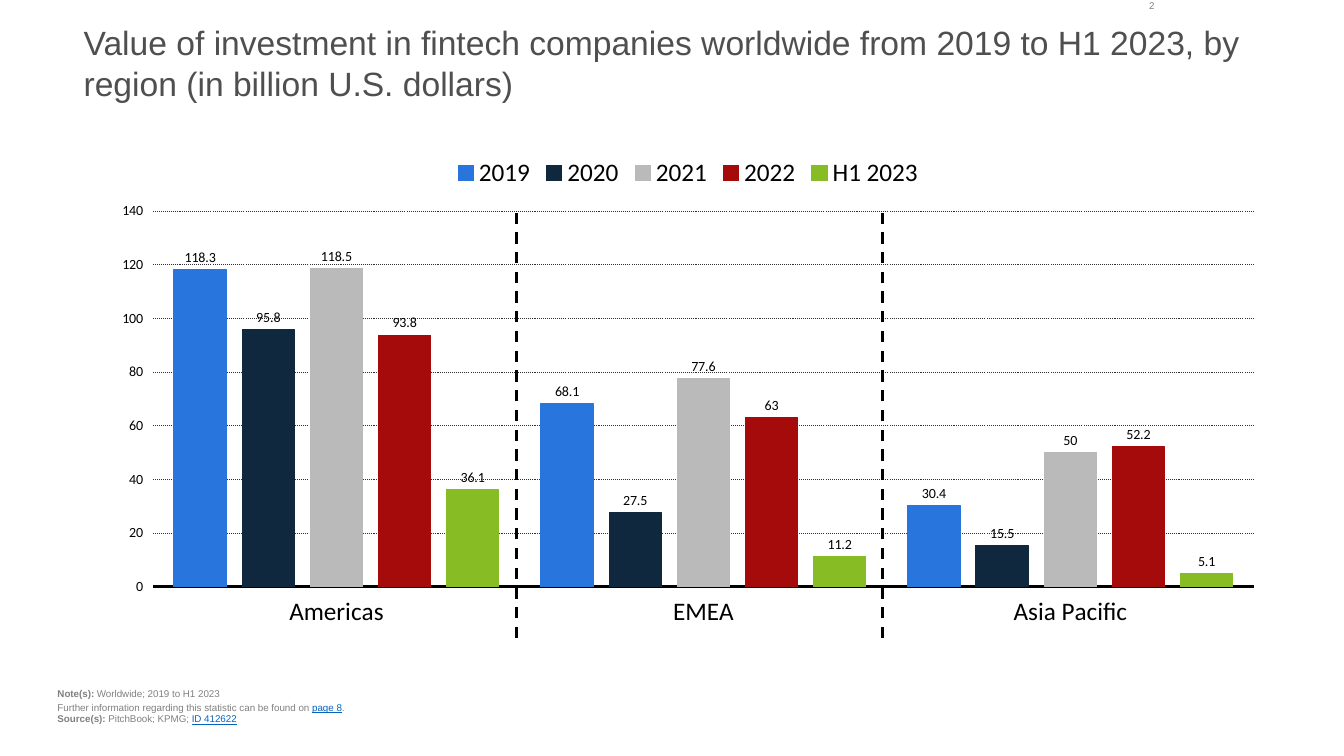
from lxml import etree
from pptx import Presentation
from pptx import util as u
from pptx.chart.data import CategoryChartData
from pptx.dml.color import RGBColor
from pptx.enum import chart as ch, dml, shapes, text
from pptx.oxml import parse_xml
from pptx.oxml.ns import nsdecls, qn

GREY, LINK, BLACK = "808080", "0563C1", "000000"


def paint(target, colour, size=None, face=None):
    """Colour a font, fill or line; a font may also get a size and a face."""
    if size:
        target.size, target.name = u.Pt(size), face
    if hasattr(target, "solid"):
        target.solid()
    colour_format = target.fore_color if hasattr(target, "fore_color") else target.color
    colour_format.rgb = RGBColor.from_string(colour)


def add_text(left, top, width, height, paras, size, colour, anchor=text.MSO_ANCHOR.TOP):
    """Add a box without margins; each paragraph is a list of (words, style)."""
    box = page.shapes.add_textbox(*map(u.Inches, (left, top, width, height)))
    frame = box.text_frame
    frame.word_wrap, frame.vertical_anchor = True, anchor
    frame.margin_left = frame.margin_right = frame.margin_top = frame.margin_bottom = 0
    for index, spans in enumerate(paras):
        para = frame.paragraphs[0] if index == 0 else frame.add_paragraph()
        para.space_after = u.Pt(0.2 * size if index == 0 else 0)
        paint(para.font, colour, size, "Arial")
        for words, style in spans:
            span = para.add_run()
            span.text = words
            if style == "bold":
                span.font.bold = True
            elif style == "link":
                span.font.underline = True
                paint(span.font, LINK)
    return frame


deck = Presentation()
deck.slide_width, deck.slide_height = u.Inches(13.33), u.Inches(7.5)
page = deck.slides.add_slide(deck.slide_layouts[6])

# Title and notes
add_text(0.83, 0.22, 11.97, 1.22, [[(
    "Value of investment in fintech companies worldwide from 2019 to H1 2023, "
    "by region (in billion U.S. dollars)", "plain")]], 24, "4F4F4F")
add_text(0.57, 6.61, 8.82, 0.58, [
    [("Note(s):", "bold"), (" Worldwide; 2019 to H1 2023", "plain")],
    [("Further information regarding this statistic can be found on ", "plain"),
     ("page 8", "link"), (".", "plain")],
    [("Source(s): ", "bold"), ("PitchBook; KPMG; ", "plain"), ("ID 412622", "link")],
], 7, GREY, text.MSO_ANCHOR.BOTTOM)

# Chart
investment = {
    "2019": ("2876DD", (118.3, 68.1, 30.4)),
    "2020": ("0F283E", (95.8, 27.5, 15.5)),
    "2021": ("BABABA", (118.5, 77.6, 50)),
    "2022": ("A60B0B", (93.8, 63, 52.2)),
    "H1 2023": ("87BC24", (36.1, 11.2, 5.1)),
}
data = CategoryChartData()
data.categories = ["Americas", "EMEA", "Asia Pacific"]
for year, (colour, values) in investment.items():
    data.add_series(year, values)
chart = page.shapes.add_chart(
    ch.XL_CHART_TYPE.COLUMN_CLUSTERED,
    *map(u.Inches, (0.98, 1.44, 11.69, 4.88)), data).chart
paint(chart.font, BLACK, 18, "Calibri")
chart.has_title = False
chart.has_legend = True
chart.legend.position = ch.XL_LEGEND_POSITION.TOP
chart.legend.include_in_layout = False
paint(chart.legend.font, BLACK, 18, "Calibri")

plot = chart.plots[0]
plot.gap_width, plot.overlap, plot.vary_by_categories = 80, -30, False
for series, (colour, values) in zip(plot.series, investment.values()):
    paint(series.format.fill, colour)
    paint(series.format.line, colour)
    series.format.line.width = u.Pt(0.75)
    series.invert_if_negative = False
    labels = series.data_labels
    labels.show_value = True
    labels.position = ch.XL_LABEL_POSITION.OUTSIDE_END
    paint(labels.font, BLACK, 10, "Calibri")

regions, amounts = chart.category_axis, chart.value_axis
for axis, size in ((regions, 18), (amounts, 10)):
    axis.major_tick_mark = axis.minor_tick_mark = ch.XL_TICK_MARK.NONE
    axis.tick_label_position = ch.XL_TICK_LABEL_POSITION.LOW
    paint(axis.tick_labels.font, BLACK, size, "Calibri")
paint(regions.format.line, BLACK)
regions.format.line.width = u.Pt(2)
amounts.minimum_scale, amounts.maximum_scale, amounts.major_unit = 0, 140, 20
amounts.tick_labels.number_format = "#,##0"
amounts.tick_labels.number_format_is_linked = False
amounts.format.line.fill.background()
grid = amounts.major_gridlines.format.line
paint(grid, "2F2F2F")
grid.width, grid.dash_style = u.Pt(0.75), dml.MSO_LINE.ROUND_DOT

# Fixed plot area, as shares of the chart
area = chart._chartSpace.chart.plotArea
for old in area.findall(qn("c:layout")):
    area.remove(old)
shares = "".join(f'<c:{tag} val="{value}"/>' for tag, value in (
    ("layoutTarget", "inner"), ("xMode", "edge"), ("yMode", "edge"),
    ("x", 0.046), ("y", 0.134), ("w", 0.934), ("h", 0.764)))
area.insert(0, parse_xml(
    f'<c:layout {nsdecls("c")}><c:manualLayout>{shares}</c:manualLayout></c:layout>'))

# Page number
number = add_text(10.97, 0, 0.48, 0.22, [[("2", "plain")]], 7, GREY)
number.paragraphs[0].alignment = text.PP_ALIGN.RIGHT

# Dividers between the regions
for x in (5.12, 8.75):
    divider = page.shapes.add_connector(
        shapes.MSO_CONNECTOR.STRAIGHT, *map(u.Inches, (x, 6.33, x, 2.09)))
    paint(divider.line, BLACK)
    divider.line.width, divider.line.dash_style = u.Pt(2), dml.MSO_LINE.DASH
    etree.SubElement(divider._element.spPr, qn("a:effectLst"))

deck.save("out.pptx")
